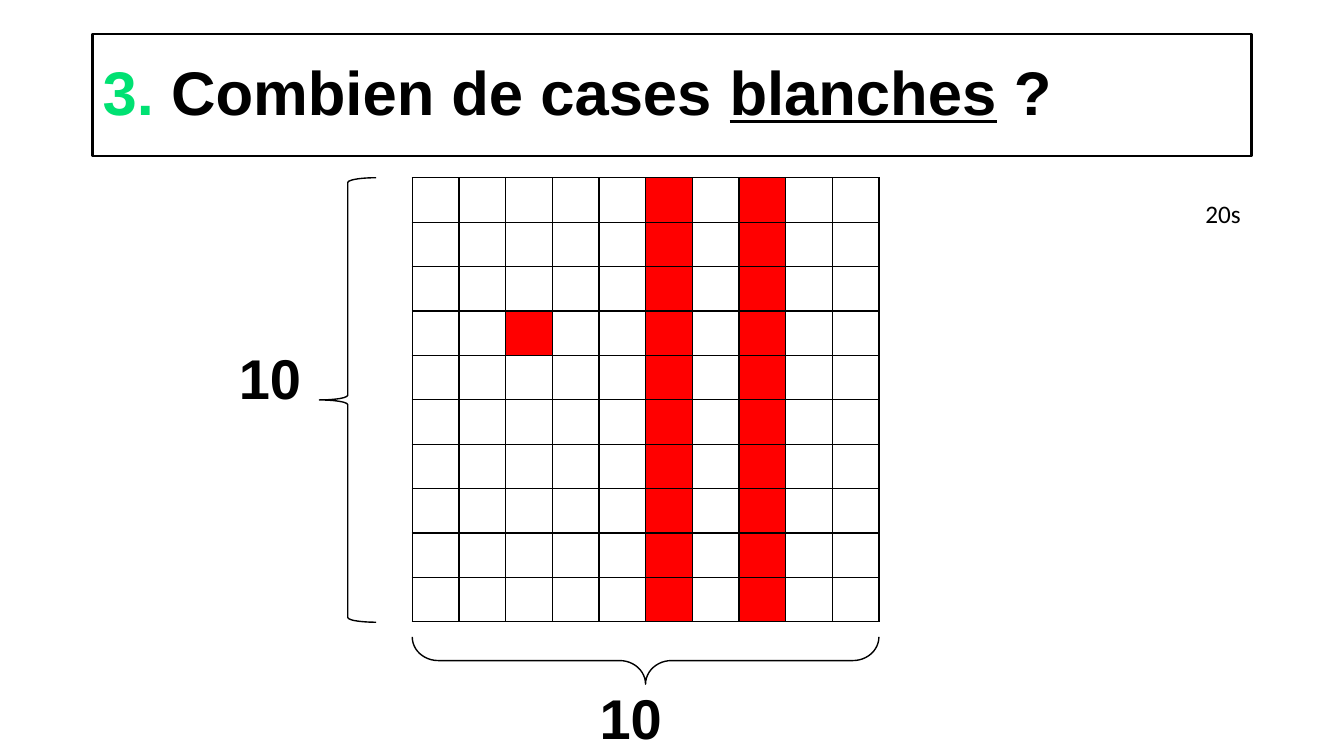
from lxml.etree import SubElement
from pptx import Presentation
from pptx.dml.color import RGBColor
from pptx.enum.shapes import MSO_SHAPE
from pptx.enum.text import MSO_ANCHOR, PP_ALIGN
from pptx.oxml.ns import qn
from pptx.util import Cm, Pt

COLORS = {"ink": "000000", "paper": "FFFFFF", "red": "FF0000", "green": "00E172"}
SIZE = 10
RED_COLS = (5, 7)
RED_CELL = (3, 2)


def color(name):
    return RGBColor.from_string(COLORS[name])


def add_run(para, text, size, font="Arial", ink="ink", bold=True, under=False):
    run = para.add_run()
    run.text = text
    run.font.size = Pt(size)
    run.font.name = font
    run.font.bold = bold
    run.font.underline = under
    run.font.color.rgb = color(ink)


def add_title(slide, x, y, w, h):
    title = slide.shapes.title
    title.left, title.top, title.width, title.height = Cm(x), Cm(y), Cm(w), Cm(h)
    title.line.color.rgb = color("ink")
    title.line.width = Pt(1.5)
    frame = title.text_frame
    frame.vertical_anchor = MSO_ANCHOR.MIDDLE
    para = frame.paragraphs[0]
    para.alignment = PP_ALIGN.LEFT
    para.line_spacing = 0.9
    add_run(para, "3. ", 44, ink="green")
    add_run(para, "Combien de cases ", 44)
    add_run(para, "blanches", 44, under=True)
    add_run(para, " ?", 44)


def add_label(slide, text, x, y, w, h, size, font="Arial", bold=True):
    box = slide.shapes.add_textbox(Cm(x), Cm(y), Cm(w), Cm(h))
    box.text_frame.word_wrap = False
    add_run(box.text_frame.paragraphs[0], text, size, font, bold=bold)


def add_edges(cell):
    props = cell._tc.get_or_add_tcPr()
    for i, side in enumerate(("a:lnL", "a:lnR", "a:lnT", "a:lnB")):
        line = SubElement(props, qn(side), w=str(Pt(1)))
        fill = SubElement(line, qn("a:solidFill"))
        SubElement(fill, qn("a:srgbClr"), val=COLORS["ink"])
        props.insert(i, line)  # edges come before the fill


def add_grid(slide, x, y, w, h):
    table = slide.shapes.add_table(SIZE, SIZE, Cm(x), Cm(y), Cm(w), Cm(h)).table
    table.first_row = table.horz_banding = False
    for col in table.columns:
        col.width = Cm(w / SIZE)
    for r, row in enumerate(table.rows):
        row.height = Cm(h / SIZE)
        for c, cell in enumerate(row.cells):
            red = c in RED_COLS or (r, c) == RED_CELL
            cell.fill.solid()
            cell.fill.fore_color.rgb = color("red" if red else "paper")
            add_edges(cell)


def add_brace(slide, x, y, w, h, turn=0, curve=0.083):
    # A turned brace is laid out upright around the centre of its box
    wide, tall = (h, w) if turn else (w, h)
    left, top = x + (w - wide) / 2, y + (h - tall) / 2
    brace = slide.shapes.add_shape(
        MSO_SHAPE.LEFT_BRACE, Cm(left), Cm(top), Cm(wide), Cm(tall))
    brace.shadow.inherit = False
    brace.rotation = turn
    brace.adjustments[0] = curve
    brace.fill.background()
    brace.line.color.rgb = color("ink")
    brace.line.width = Pt(1)


def add_figure(slide, x, y, w, h):
    add_grid(slide, x, y, w, h)
    # Row count
    add_brace(slide, x - 2.34, y, 1.43, h)
    add_label(slide, str(SIZE), x - 4.62, y + 4.06, 2.11, 1.96, 40)
    # Column count
    add_brace(slide, x, y + h + 0.37, w, 1.19, 270, 0.55)
    add_label(slide, str(SIZE), x + 4.47, y + h + 1.42, 2.11, 1.96, 40)


def main():
    deck = Presentation()
    deck.slide_width, deck.slide_height = Cm(33.87), Cm(19.05)
    slide = deck.slides.add_slide(deck.slide_layouts[5])
    add_title(slide, 2.33, 0.85, 29.21, 3.09)
    add_figure(slide, 10.39, 4.48, 11.76, 11.2)
    # Time limit
    add_label(slide, "20s", 30.13, 4.88, 1.42, 1.03, 18, "Calibri", False)
    deck.save("out.pptx")


if __name__ == "__main__":
    main()
